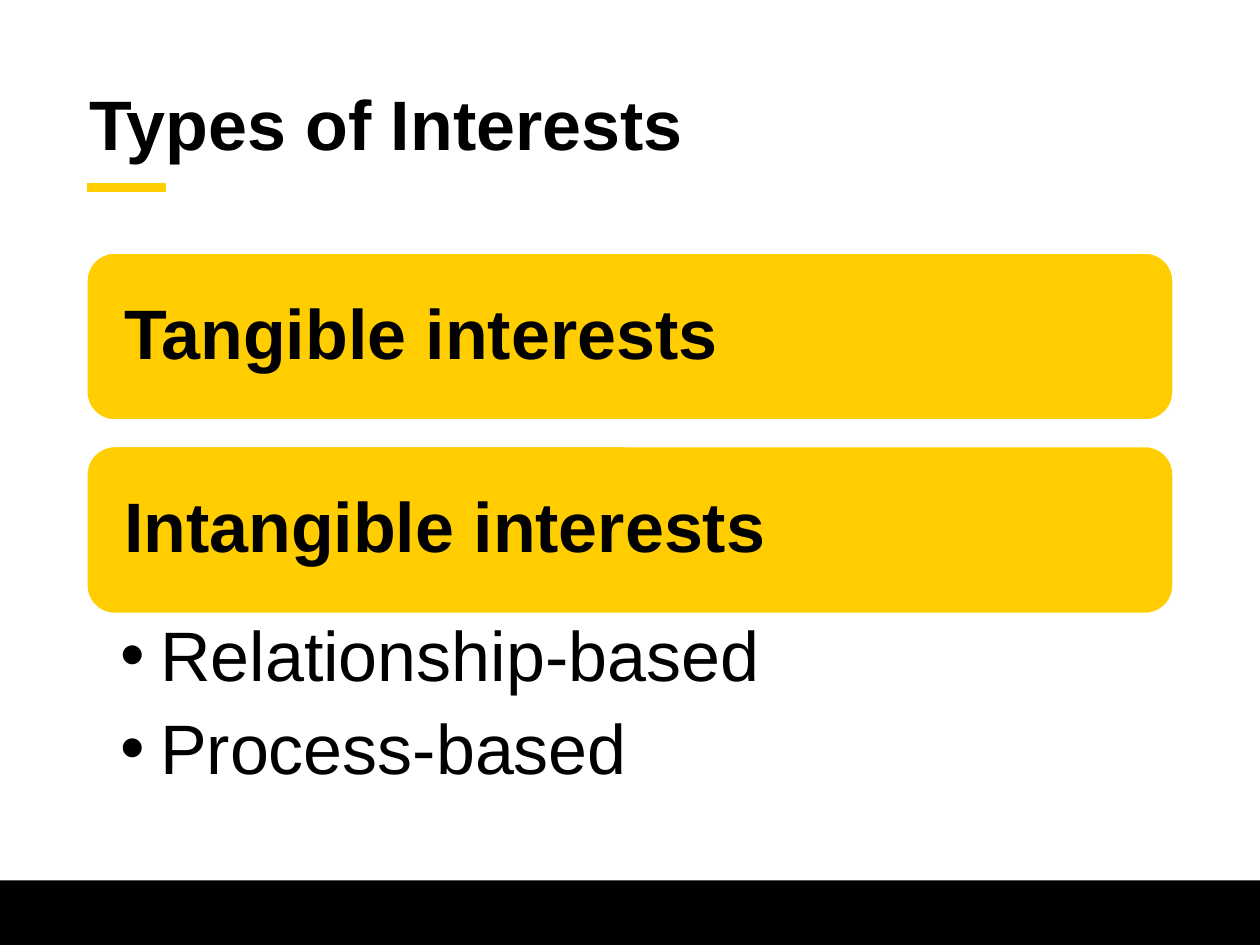
from dataclasses import dataclass

from lxml.etree import SubElement
from pptx import Presentation
from pptx.dml.color import RGBColor
from pptx.enum.shapes import MSO_CONNECTOR, MSO_SHAPE
from pptx.enum.text import MSO_ANCHOR, PP_ALIGN
from pptx.oxml.ns import qn
from pptx.util import Cm, Pt


@dataclass(frozen=True)
class Theme:
    black: RGBColor = RGBColor(0x00, 0x00, 0x00)
    white: RGBColor = RGBColor(0xFF, 0xFF, 0xFF)
    gold: RGBColor = RGBColor(0xFF, 0xCD, 0x00)
    font: str = "Arial"
    size: Pt = Pt(40)
    bullet_gap: Pt = Pt(10)


@dataclass(frozen=True)
class Box:
    left: Cm
    top: Cm
    width: Cm
    height: Cm

    def bounds(self) -> tuple:
        return self.left, self.top, self.width, self.height


@dataclass(frozen=True)
class Card:
    text: str
    top: Cm


THEME = Theme()
LEFT, WIDTH = Cm(1.75), Cm(21.9)
CARD_HEIGHT = Cm(3.37)
CARDS = [Card("Tangible interests", Cm(5.1)), Card("Intangible interests", Cm(9))]
BULLETS = ["Relationship-based", "Process-based"]


def set_all(obj, values: dict) -> None:
    for name, value in values.items():
        setattr(obj, name, value)


def write(tf, lines: list[str], frame: dict, bold: bool = True, bulleted: bool = False) -> None:
    set_all(tf, {"word_wrap": True, **frame})
    for i, line in enumerate(lines):
        p = tf.paragraphs[0] if i == 0 else tf.add_paragraph()
        set_all(p, {"alignment": PP_ALIGN.LEFT, "line_spacing": 0.9})
        if bulleted:
            p.space_after = THEME.bullet_gap
            add_bullet(p)
        r = p.add_run()
        r.text = line
        set_all(r.font, {"name": THEME.font, "size": THEME.size, "bold": bold})
        r.font.color.rgb = THEME.black


def add_bullet(p) -> None:
    pPr = p._p.get_or_add_pPr()
    pPr.set("marL", str(Cm(0.79)))
    pPr.set("indent", str(-Cm(0.79)))
    SubElement(pPr, qn("a:buFont")).set("typeface", THEME.font)
    SubElement(pPr, qn("a:buChar")).set("char", "•")


def add_block(s, kind: MSO_SHAPE, box: Box, fill: RGBColor):
    sp = s.shapes.add_shape(kind, *box.bounds())
    sp.shadow.inherit = False
    sp.fill.solid()
    sp.fill.fore_color.rgb = fill
    sp.line.fill.background()
    return sp


def add_card(s, card: Card) -> None:
    sp = add_block(s, MSO_SHAPE.ROUNDED_RECTANGLE, Box(LEFT, card.top, WIDTH, CARD_HEIGHT), THEME.gold)
    sp.line.color.rgb = THEME.white
    sp.line.width = Pt(1)
    margin = Cm(0.59)
    write(sp.text_frame, [card.text], {
        "vertical_anchor": MSO_ANCHOR.MIDDLE, "margin_left": margin, "margin_right": margin,
    })


def add_accent(s) -> None:
    y = Cm(3.78)
    line = s.shapes.add_connector(MSO_CONNECTOR.STRAIGHT, LEFT, y, LEFT + Cm(1.6), y)
    line.line.color.rgb = THEME.gold
    line.line.width = Pt(5)
    SubElement(line._element.spPr, qn("a:effectLst"))


def main() -> None:
    prs = Presentation()
    set_all(prs, {"slide_width": Cm(25.4), "slide_height": Cm(19.05)})
    s = prs.slides.add_slide(prs.slide_layouts[6])

    footer_top = Cm(17.75)
    footer = Box(Cm(0), footer_top, prs.slide_width, prs.slide_height - footer_top)
    add_block(s, MSO_SHAPE.RECTANGLE, footer, THEME.black)
    add_accent(s)

    title = s.shapes.add_textbox(*Box(Cm(1.55), Cm(1.37), WIDTH, Cm(2.41)).bounds())
    write(title.text_frame, ["Types of Interests"], {"vertical_anchor": MSO_ANCHOR.MIDDLE})

    for card in CARDS:
        add_card(s, card)

    body = s.shapes.add_textbox(*Box(LEFT, CARDS[-1].top + CARD_HEIGHT, WIDTH, Cm(3.56)).bounds())
    write(body.text_frame, BULLETS, {
        "margin_left": Cm(0.69), "margin_right": Cm(0.79),
        "margin_top": Cm(0.15), "margin_bottom": Cm(0.15),
    }, bold=False, bulleted=True)

    prs.save("out.pptx")


if __name__ == "__main__":
    main()
